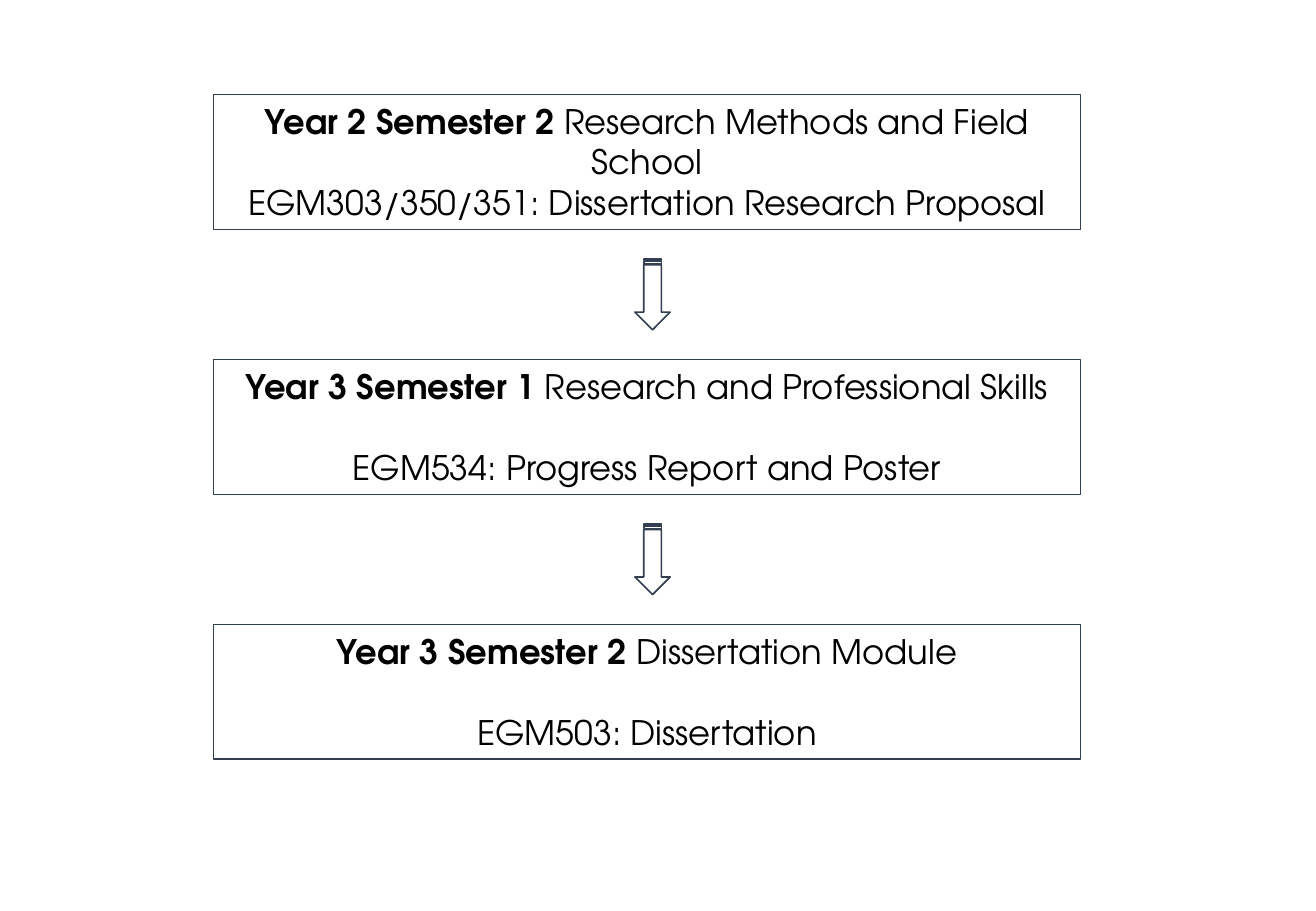
from dataclasses import dataclass

from pptx import Presentation
from pptx.dml.color import RGBColor
from pptx.enum.shapes import MSO_SHAPE
from pptx.enum.text import MSO_ANCHOR, PP_ALIGN
from pptx.util import Inches, Pt


@dataclass(frozen=True)
class Theme:
    font: str = "TeX Gyre Adventor"
    size: float = 20
    line_height: float = 24
    text: str = "000000"
    outline: str = "333F50"
    box_line: float = 0.75
    arrow_line: float = 1


BOX_LEFT, BOX_TOP, BOX_WIDTH, BOX_HEIGHT = 1.76, 0.78, 7.13, 1.11
STAGE_PITCH = 2.18
ARROW_LEFT, ARROW_TOP, ARROW_LENGTH, ARROW_THICKNESS = 5.08, 2.28, 0.58, 0.29

# Semester, module, assessment, blank lines between module and assessment
STAGES = [
    ("Year 2 Semester 2", "Research Methods and Field School",
     "EGM303/350/351: Dissertation Research Proposal", 0),
    ("Year 3 Semester 1", "Research and Professional Skills",
     "EGM534: Progress Report and Poster", 1),
    ("Year 3 Semester 2", "Dissertation Module",
     "EGM503: Dissertation", 1),
]


class SlideBuilder:
    def __init__(self, slide, theme):
        self.s = slide
        self.theme = theme

    def outline_shape(self, kind, left, top, width, height, line_width):
        sp = self.s.shapes.add_shape(
            kind, Inches(left), Inches(top), Inches(width), Inches(height))
        sp.shadow.inherit = False
        sp.fill.background()
        sp.line.color.rgb = RGBColor.from_string(self.theme.outline)
        sp.line.width = Pt(line_width)
        return sp

    def add_run(self, p, text, bold=False):
        r = p.add_run()
        r.text = text
        r.font.name = self.theme.font
        r.font.size = Pt(self.theme.size)
        r.font.bold = bold
        r.font.color.rgb = RGBColor.from_string(self.theme.text)

    def stage_box(self, top, semester, module, assessment, gap_lines):
        sp = self.outline_shape(MSO_SHAPE.RECTANGLE, BOX_LEFT, top,
                                BOX_WIDTH, BOX_HEIGHT, self.theme.box_line)
        tf = sp.text_frame
        tf.word_wrap = True
        tf.vertical_anchor = MSO_ANCHOR.TOP
        p = tf.paragraphs[0]
        p.alignment = PP_ALIGN.CENTER
        self.add_run(p, semester, bold=True)
        self.add_run(p, f" {module}")
        p = tf.add_paragraph()
        p.alignment = PP_ALIGN.CENTER
        p.space_before = Pt(gap_lines * self.theme.line_height)
        self.add_run(p, assessment)

    def down_arrow(self, top):
        sp = self.outline_shape(MSO_SHAPE.STRIPED_RIGHT_ARROW, ARROW_LEFT, top,
                                ARROW_LENGTH, ARROW_THICKNESS,
                                self.theme.arrow_line)
        sp.rotation = 90


def main():
    prs = Presentation()
    prs.slide_width, prs.slide_height = Inches(10.83), Inches(7.5)
    blank_layout = prs.slide_layouts[6]
    builder = SlideBuilder(prs.slides.add_slide(blank_layout), Theme())
    for i, stage in enumerate(STAGES):
        builder.stage_box(BOX_TOP + i * STAGE_PITCH, *stage)
    for i in range(len(STAGES) - 1):
        builder.down_arrow(ARROW_TOP + i * STAGE_PITCH)
    prs.save("out.pptx")


if __name__ == "__main__":
    main()
